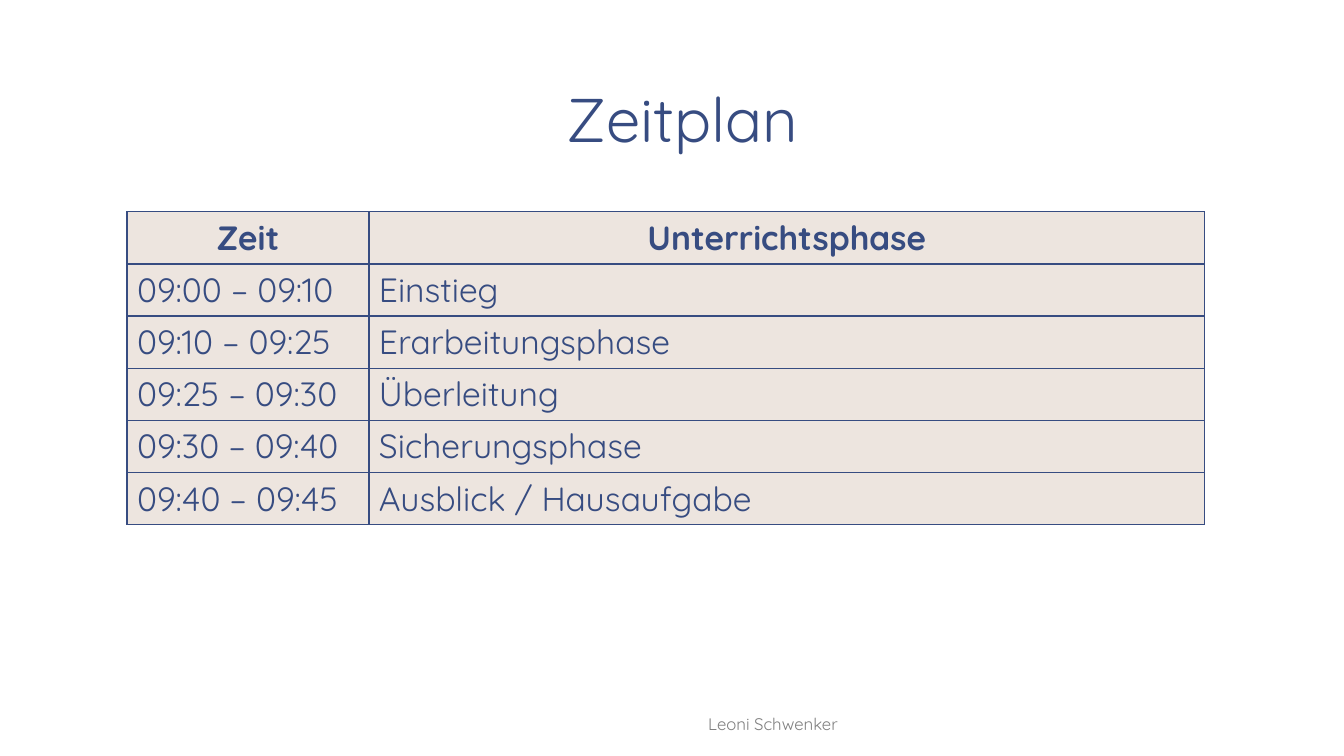
from dataclasses import dataclass

from lxml import etree
from pptx import Presentation
from pptx.dml.color import RGBColor
from pptx.enum import text as t
from pptx.oxml import ns
from pptx.util import Pt


@dataclass(frozen=True)
class Theme:
    font: str = "Quicksand"
    blue: str = "374C81"
    sand: str = "EDE5DF"
    grey: str = "808080"
    white: str = "FFFFFF"
    title_size: int = 44
    table_size: int = 24
    footer_size: int = 12
    thin: int = 1
    thick: int = 2


THEME = Theme()
COLUMN_WIDTHS = (172.8, 596.9)
ROW_HEIGHT = 37.2
SCHEDULE = [
    ("Zeit", "Unterrichtsphase"),
    ("09:00 – 09:10", "Einstieg"),
    ("09:10 – 09:25", "Erarbeitungsphase"),
    ("09:25 – 09:30", "Überleitung"),
    ("09:30 – 09:40", "Sicherungsphase"),
    ("09:40 – 09:45", "Ausblick / Hausaufgabe"),
]


def write_text(frame, text, *, size, color=THEME.blue, bold=False,
               align=t.PP_ALIGN.LEFT, line_spacing=None):
    para = frame.paragraphs[0]
    para.alignment = align
    para.line_spacing = line_spacing
    span = para.add_run()
    span.text = text
    span.font.name = THEME.font
    span.font.size = Pt(size)
    span.font.bold = bold
    span.font.color.rgb = RGBColor.from_string(color)


def set_frame(frame):
    """Wrap text and anchor it at the bottom, with the slide's margins."""
    frame.word_wrap = True
    frame.auto_size = t.MSO_AUTO_SIZE.NONE
    frame.vertical_anchor = t.MSO_ANCHOR.BOTTOM
    frame.margin_left = frame.margin_right = Pt(9.36)
    frame.margin_top = frame.margin_bottom = Pt(5.04)


def set_borders(cell, widths):
    """Draw the cell's edges; widths maps L, R, T and B to points."""
    properties = cell._tc.get_or_add_tcPr()
    for index, (side, width) in enumerate(widths.items()):
        line = etree.Element(ns.qn(f"a:ln{side}"), w=str(Pt(width)))
        fill = etree.SubElement(line, ns.qn("a:solidFill"))
        etree.SubElement(fill, ns.qn("a:srgbClr"), val=THEME.blue)
        properties.insert(index, line)


def add_title(slide, text):
    title = slide.shapes.title
    title.left, title.top = Pt(87.8), Pt(5.8)
    title.width, title.height = Pt(800), Pt(110.2)
    set_frame(title.text_frame)
    write_text(title.text_frame, text, size=THEME.title_size,
               align=t.PP_ALIGN.CENTER, line_spacing=0.85)


def add_schedule(slide, rows):
    table = slide.shapes.add_table(
        len(rows), len(COLUMN_WIDTHS), Pt(90.7), Pt(151.2),
        Pt(sum(COLUMN_WIDTHS)), Pt(ROW_HEIGHT * len(rows))).table
    table.horz_banding = False
    for column, width in zip(table.columns, COLUMN_WIDTHS):
        column.width = Pt(width)
    for row_index, texts in enumerate(rows):
        table.rows[row_index].height = Pt(ROW_HEIGHT)
        header = row_index == 0
        align = t.PP_ALIGN.CENTER if header else t.PP_ALIGN.LEFT
        top = THEME.thick if row_index == 1 else THEME.thin
        bottom = THEME.thick if header else THEME.thin
        for column_index, text in enumerate(texts):
            cell = table.cell(row_index, column_index)
            cell.fill.solid()
            cell.fill.fore_color.rgb = RGBColor.from_string(THEME.sand)
            set_borders(cell, {"L": THEME.thin, "R": THEME.thin,
                               "T": top, "B": bottom})
            write_text(cell.text_frame, text, size=THEME.table_size,
                       bold=header, align=align)


def add_footer(slide, text):
    box = slide.shapes.add_textbox(Pt(307.4), Pt(504), Pt(489.6), Pt(25.2))
    set_frame(box.text_frame)
    write_text(box.text_frame, text, size=THEME.footer_size,
               color=THEME.grey, align=t.PP_ALIGN.CENTER)


def main():
    deck = Presentation()
    deck.slide_width, deck.slide_height = Pt(960), Pt(540)
    slide = deck.slides.add_slide(deck.slide_layouts.get_by_name("Title Only"))
    background = slide.background.fill
    background.solid()
    background.fore_color.rgb = RGBColor.from_string(THEME.white)
    add_title(slide, "Zeitplan")
    add_schedule(slide, SCHEDULE)
    add_footer(slide, "Leoni Schwenker")
    deck.save("out.pptx")


if __name__ == "__main__":
    main()
